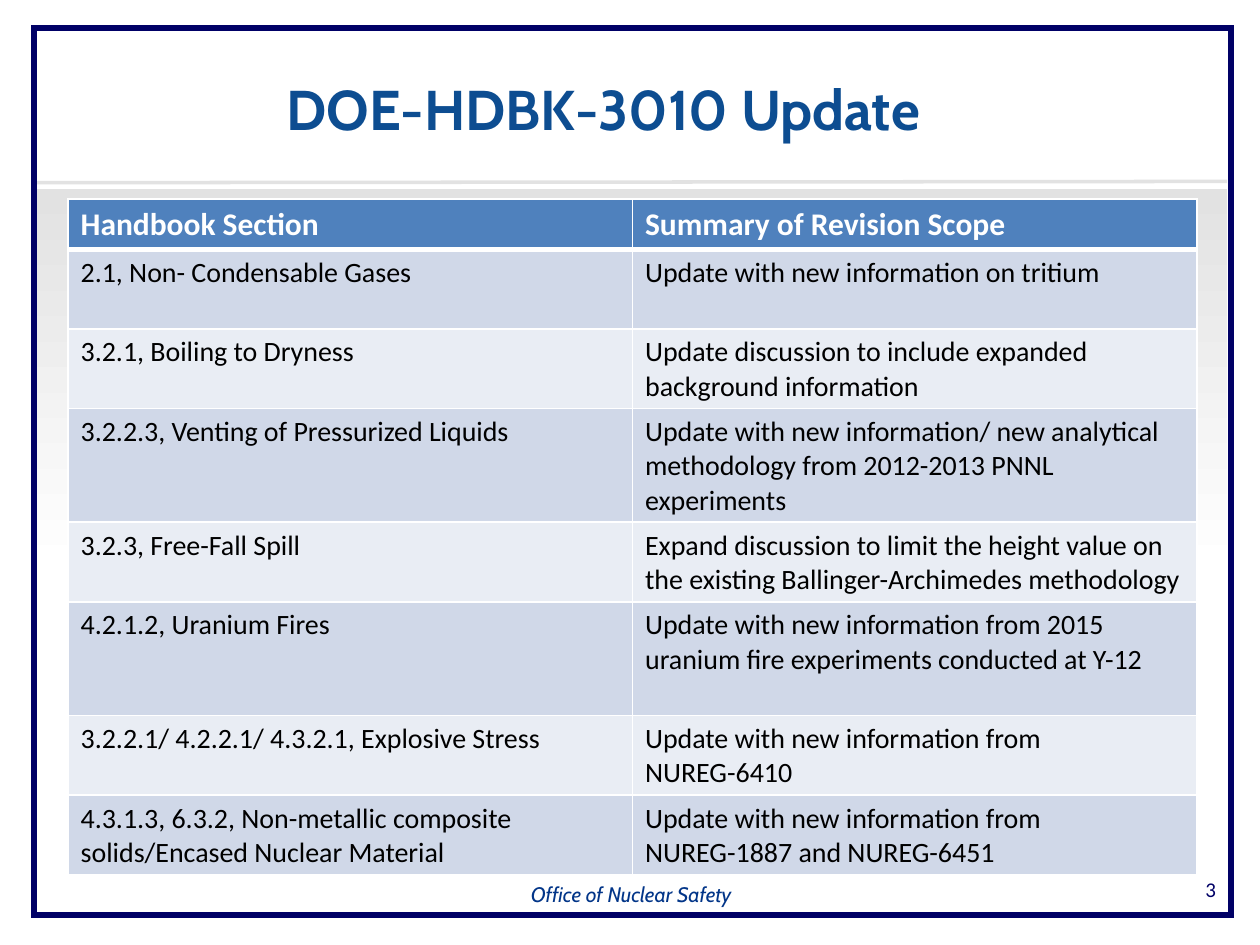
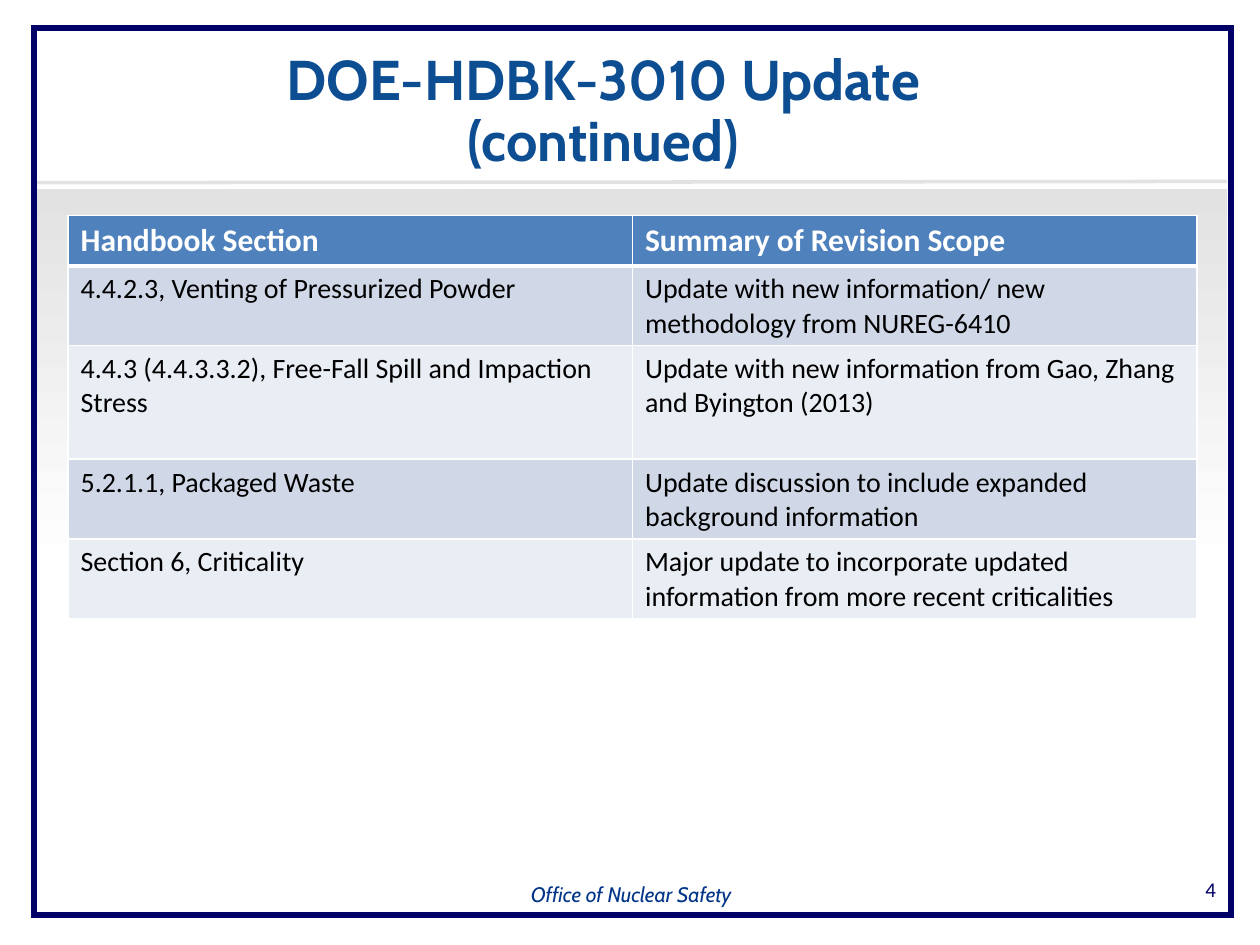
from lxml import etree
from pptx import Presentation
from pptx import util as u
from pptx.dml.color import RGBColor
from pptx.enum import shapes, text
from pptx.oxml.ns import qn

# Content: title, number, table top (inches), rows of (section, scope, lines of height)
HEADINGS = ("Handbook Section", "Summary of Revision Scope")
PAGES = [
    ("DOE-HDBK-3010 Update", 3, 1.58, [
        ("2.1, Non- Condensable Gases", "Update with new information on tritium", 2),
        ("3.2.1, Boiling to Dryness",
         "Update discussion to include expanded background information", 2),
        ("3.2.2.3, Venting of Pressurized Liquids",
         "Update with new information/ new analytical methodology "
         "from 2012-2013 PNNL experiments", 3),
        ("3.2.3, Free-Fall Spill",
         "Expand discussion to limit the height value on the existing "
         "Ballinger-Archimedes methodology", 2),
        ("4.2.1.2, Uranium Fires",
         "Update with new information from 2015 uranium fire experiments "
         "conducted at Y-12", 3),
        ("3.2.2.1/ 4.2.2.1/ 4.3.2.1, Explosive Stress",
         "Update with new information from NUREG-6410", 2),
        ("4.3.1.3, 6.3.2, Non-metallic composite solids/Encased Nuclear Material",
         "Update with new information from NUREG-1887 and NUREG-6451", 2),
    ]),
    ("DOE-HDBK-3010 Update (continued)", 4, 1.71, [
        ("4.4.2.3, Venting of Pressurized Powder",
         "Update with new information/ new methodology from NUREG-6410", 2),
        ("4.4.3 (4.4.3.3.2), Free-Fall Spill and Impaction Stress",
         "Update with new information from Gao, Zhang and Byington (2013)", 3),
        ("5.2.1.1, Packaged Waste",
         "Update discussion to include expanded background information", 2),
        ("Section 6, Criticality",
         "Major update to incorporate updated information from more recent "
         "criticalities", 2),
    ]),
]

# Style
WHITE = RGBColor(0xFF, 0xFF, 0xFF)
BLACK = RGBColor(0x00, 0x00, 0x00)
GREY = RGBColor(0xE2, 0xE2, 0xE2)
NAVY = RGBColor(0x00, 0x00, 0x66)
FOOTER_BLUE = RGBColor(0x02, 0x35, 0x88)
TITLE_BLUE = RGBColor(0x0D, 0x4D, 0x91)
HEADER_FILL = RGBColor(0x4F, 0x81, 0xBD)
BAND_FILLS = (RGBColor(0xE9, 0xED, 0xF4), RGBColor(0xD0, 0xD8, 0xE8))
TABLE_LEFT, COLUMN_WIDTH = 0.54, 4.48
HEADER_HEIGHT, LINE_HEIGHT, CELL_PADDING = 0.39, 0.27, 0.09


def inches(*lengths):
    return [u.Inches(length) for length in lengths]


def set_font(para, name, size, color, bold=False, italic=False):
    font = para.font
    font.name, font.size, font.color.rgb = name, u.Pt(size), color
    font.bold, font.italic = bold, italic


def add_text(page, place, words, name, size, color, align,
             anchor=text.MSO_ANCHOR.TOP, **style):
    frame = page.shapes.add_textbox(*inches(*place)).text_frame
    frame.word_wrap, frame.vertical_anchor = True, anchor
    para = frame.paragraphs[0]
    para.text, para.alignment = words, align
    set_font(para, name, size, color, **style)
    return para


def add_rectangle(page, *place):
    box = page.shapes.add_shape(shapes.MSO_SHAPE.RECTANGLE, *inches(*place))
    box.shadow.inherit = False
    return box


def add_background(page):
    # Shaded band, fading downwards
    band = add_rectangle(page, 0.29, 1.5, 9.45, 3.03)
    band.fill.gradient()
    band.fill.gradient_angle = 90
    for stop, color in zip(band.fill.gradient_stops, (WHITE, GREY)):
        stop.color.rgb = color
    band.line.fill.background()

    # Rule under the title
    rule = page.shapes.add_connector(shapes.MSO_CONNECTOR.STRAIGHT,
                                     *inches(0.28, 1.45, 9.74, 1.44))
    rule.line.color.rgb, rule.line.width = GREY, u.Pt(2)
    etree.SubElement(rule._element.spPr, qn("a:effectLst"))

    # Border round the page, with square corners
    border = add_rectangle(page, 0.27, 0.22, 9.5, 7.04)
    border.fill.background()
    border.line.color.rgb, border.line.width = NAVY, u.Pt(3.25)
    etree.SubElement(border.line._get_or_add_ln(), qn("a:miter"), lim="800000")

    add_text(page, (0.36, 6.95, 9.3, 0.3), "Office of Nuclear Safety", "Cabin", 12,
             FOOTER_BLUE, text.PP_ALIGN.CENTER, italic=True)


def set_borders(cell, top, bottom):
    properties = cell._tc.get_or_add_tcPr()
    for side, width in (("L", 1), ("R", 1), ("T", top), ("B", bottom)):
        line = etree.SubElement(properties, qn("a:ln" + side), w=str(u.Pt(width)))
        fill = etree.SubElement(line, qn("a:solidFill"))
        etree.SubElement(fill, qn("a:srgbClr"), val=str(WHITE))


def add_scope_table(page, top, rows):
    heights = [HEADER_HEIGHT] + [CELL_PADDING + LINE_HEIGHT * row[2] for row in rows]
    place = inches(TABLE_LEFT, top, 2 * COLUMN_WIDTH, sum(heights))
    table = page.shapes.add_table(len(heights), 2, *place).table
    for column in table.columns:
        column.width = u.Inches(COLUMN_WIDTH)
    for r, (height, words) in enumerate(zip(heights, [HEADINGS, *rows])):
        table.rows[r].height = u.Inches(height)
        header = r == 0
        for c in range(2):
            cell = table.cell(r, c)
            set_borders(cell, 3 if r == 1 else 1, 3 if header else 1)
            cell.fill.solid()
            cell.fill.fore_color.rgb = HEADER_FILL if header else BAND_FILLS[r % 2]
            cell.text = words[c]
            set_font(cell.text_frame.paragraphs[0], "Calibri", 18 if header else 16,
                     WHITE if header else BLACK, bold=header)


def main():
    deck = Presentation()
    deck.slide_width, deck.slide_height = inches(10, 7.5)
    for title, number, table_top, rows in PAGES:
        page = deck.slides.add_slide(deck.slide_layouts[6])
        add_background(page)
        add_text(page, (9.25, 6.86, 0.5, 0.4), str(number), "Calibri", 12, NAVY,
                 text.PP_ALIGN.RIGHT, text.MSO_ANCHOR.MIDDLE)
        heading = add_text(page, (1.5, 0.33, 6.58, 1.13), title, "Cabin", 32, TITLE_BLUE,
                           text.PP_ALIGN.CENTER, text.MSO_ANCHOR.MIDDLE, bold=True)
        heading.line_spacing = 0.9
        add_scope_table(page, table_top, rows)
    deck.save("out.pptx")


if __name__ == "__main__":
    main()
